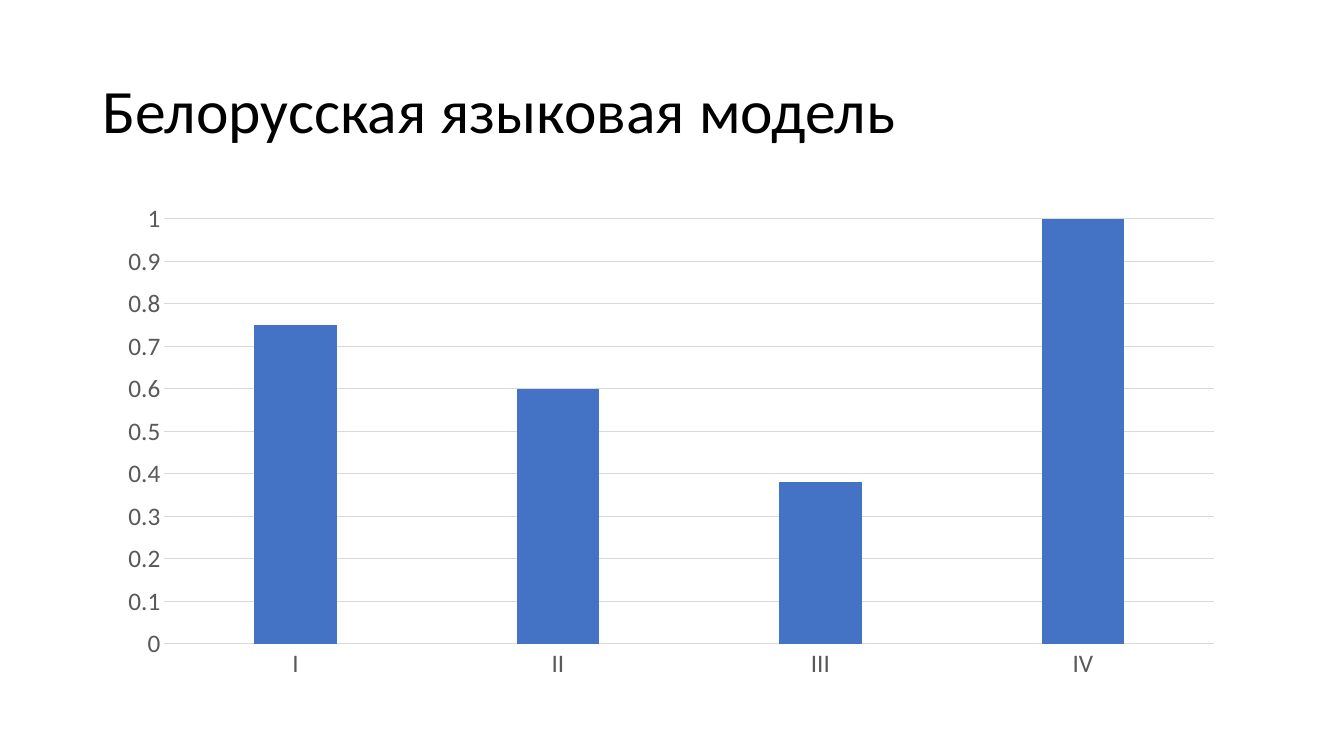
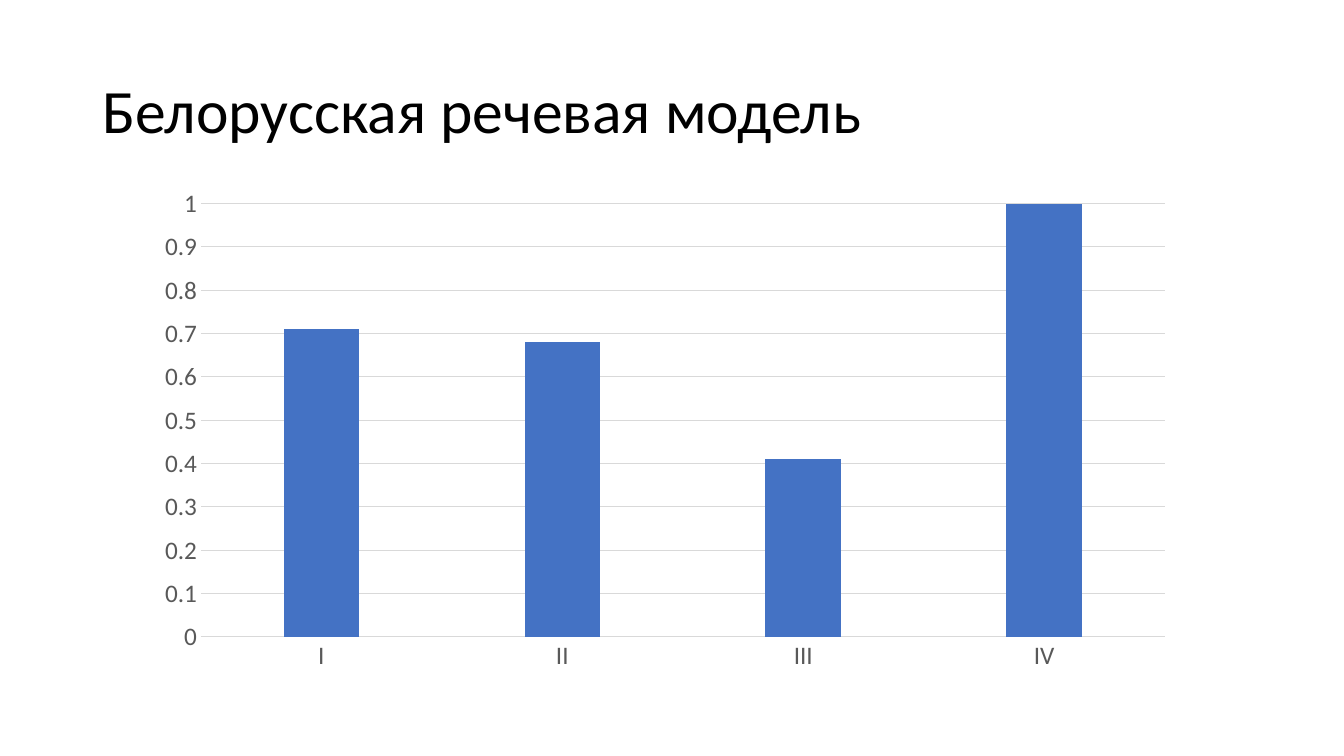
from dataclasses import dataclass

from pptx import Presentation
from pptx.chart.data import CategoryChartData
from pptx.dml.color import RGBColor
from pptx.enum.chart import XL_CHART_TYPE, XL_TICK_MARK
from pptx.enum.text import MSO_ANCHOR
from pptx.util import Pt

COLUMNS = XL_CHART_TYPE.COLUMN_CLUSTERED
NO_TICK = XL_TICK_MARK.NONE
MIDDLE = MSO_ANCHOR.MIDDLE

# Shared style
FONT = "Calibri"
BLACK = "000000"
LABEL_GREY = "595959"
GRID_GREY = "D9D9D9"
BAR_BLUE = "4472C4"
TITLE_BOX = (66, 28.8, 828, 104.4)
CATEGORIES = ("I", "II", "III", "IV")


@dataclass(frozen=True)
class ModelSlide:
    title: str
    chart_box: tuple[float, float, float, float]
    values: tuple[float, ...]


SLIDES = (
    ModelSlide("Белорусская языковая модель", (75.6, 138.2, 807.8, 353.5),
               (0.75, 0.6, 0.38, 1)),
    ModelSlide("Белорусская речевая модель", (103, 127.4, 743.8, 359.3),
               (0.71, 0.68, 0.41, 1)),
)


def rgb(color: str) -> RGBColor:
    return RGBColor.from_string(color)


def set_font(font, size: float, color: str) -> None:
    font.name = FONT
    font.size = Pt(size)
    font.color.rgb = rgb(color)


def set_line(line, color: str) -> None:
    line.color.rgb = rgb(color)
    line.width = Pt(0.75)


def add_title(s, text: str) -> None:
    tf = s.shapes.add_textbox(*map(Pt, TITLE_BOX)).text_frame
    tf.word_wrap = True
    tf.vertical_anchor = MIDDLE
    p = tf.paragraphs[0]
    p.text = text
    p.line_spacing = 0.9
    set_font(p.font, 44, BLACK)


def add_column_chart(s, model: ModelSlide) -> None:
    data = CategoryChartData()
    data.categories = CATEGORIES
    data.add_series("Series 1", model.values)
    chart = s.shapes.add_chart(COLUMNS, *map(Pt, model.chart_box), data).chart
    chart.has_title = False
    chart.has_legend = False
    set_font(chart.font, 18, BLACK)

    # Columns
    plot = chart.plots[0]
    plot.vary_by_categories = False
    plot.gap_width = 219
    plot.overlap = -27
    fill = plot.series[0].format.fill
    fill.solid()
    fill.fore_color.rgb = rgb(BAR_BLUE)

    # Axes and gridlines
    for axis in (chart.category_axis, chart.value_axis):
        axis.major_tick_mark = axis.minor_tick_mark = NO_TICK
        set_font(axis.tick_labels.font, 18, LABEL_GREY)
    set_line(chart.category_axis.format.line, GRID_GREY)
    value_axis = chart.value_axis
    value_axis.minimum_scale = 0
    value_axis.maximum_scale = 1
    value_axis.major_unit = 0.1
    value_axis.format.line.fill.background()
    value_axis.has_major_gridlines = True
    set_line(value_axis.major_gridlines.format.line, GRID_GREY)


def main() -> None:
    prs = Presentation()
    prs.slide_width, prs.slide_height = Pt(960), Pt(540)
    for model in SLIDES:
        s = prs.slides.add_slide(prs.slide_layouts[6])
        add_title(s, model.title)
        add_column_chart(s, model)
    prs.save("out.pptx")


if __name__ == "__main__":
    main()
